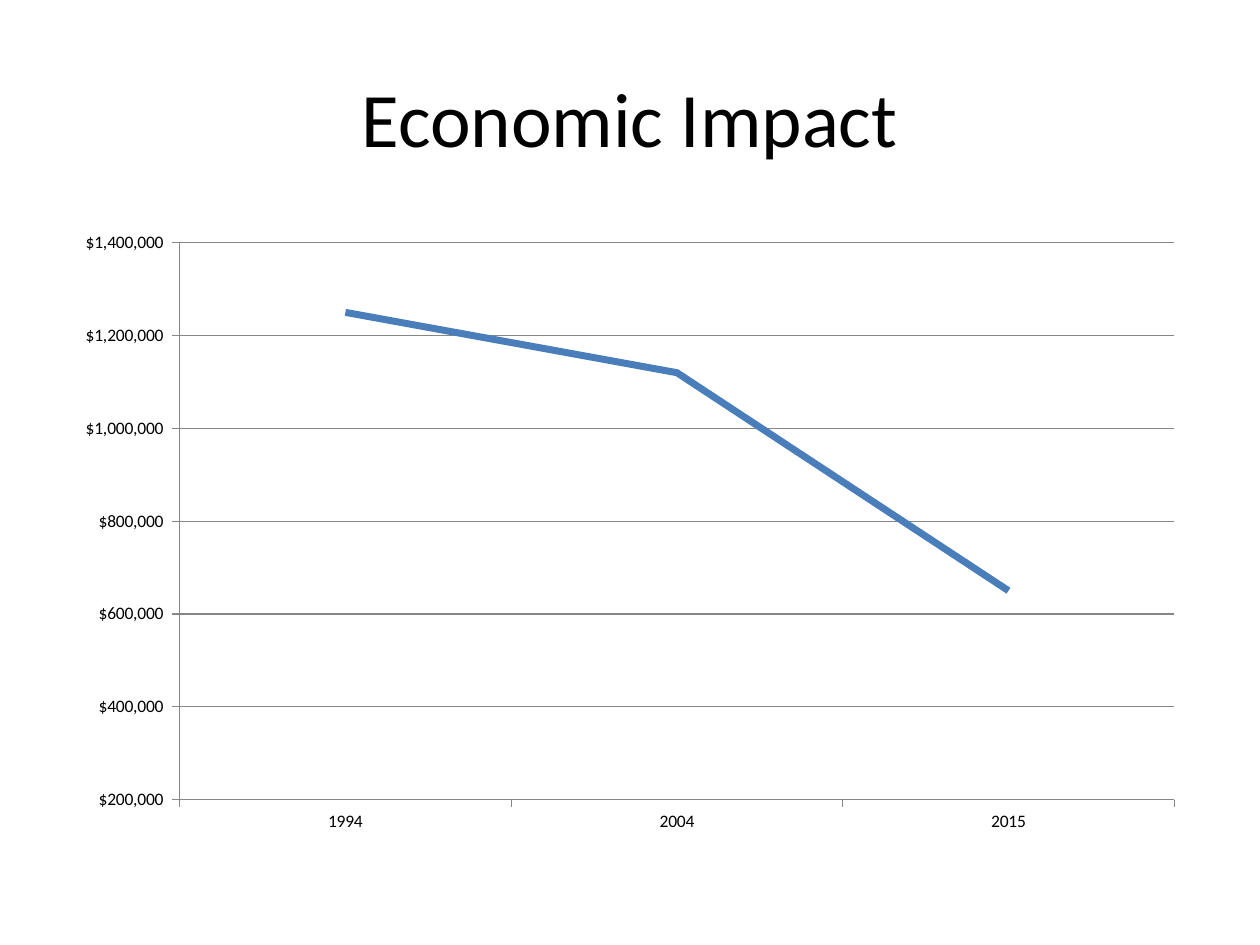
from pptx import Presentation
from pptx.chart.data import CategoryChartData
from pptx.dml.color import RGBColor
from pptx.enum.chart import XL_CHART_TYPE, XL_TICK_MARK
from pptx.enum.text import MSO_ANCHOR, PP_ALIGN
from pptx.util import Pt

COLORS = {"text": "000000", "line": "4A7EBB", "axis": "868686", "back": "FFFFFF"}
FONT = "Calibri"
SALES = {"1994": 1250000, "2004": 1120000, "2015": 650000}


def shade(name):
    """Return the named colour."""
    return RGBColor.from_string(COLORS[name])


def style(font, size, color="text"):
    """Set face, size and colour of a font."""
    font.name, font.size = FONT, Pt(size)
    font.color.rgb = shade(color)


def write(frame, text, size=18, color="text", align=PP_ALIGN.LEFT, anchor=MSO_ANCHOR.TOP):
    """Put formatted text in a frame."""
    frame.word_wrap = True
    frame.vertical_anchor = anchor
    para = frame.paragraphs[0]
    para.alignment = align
    run = para.add_run()
    run.text = text
    style(run.font, size, color)


def add_title(slide, box):
    """Place the title in its box."""
    title = slide.shapes.title
    title.left, title.top, title.width, title.height = map(Pt, box)
    write(title.text_frame, "Economic Impact", size=44,
          align=PP_ALIGN.CENTER, anchor=MSO_ANCHOR.MIDDLE)


def rule(line, color="axis", width=0.75):
    """Set colour and width of a line."""
    line.color.rgb = shade(color)
    line.width = Pt(width)


def add_trend(slide, box):
    """Place the line chart in its box."""
    data = CategoryChartData()
    data.categories = list(SALES)
    data.add_series("Series 1", list(SALES.values()))
    chart = slide.shapes.add_chart(XL_CHART_TYPE.LINE, *map(Pt, box), data).chart
    chart.has_title = chart.has_legend = False
    style(chart.font, 10)

    for axis in (chart.category_axis, chart.value_axis):
        axis.major_tick_mark = XL_TICK_MARK.OUTSIDE
        axis.minor_tick_mark = XL_TICK_MARK.NONE
        rule(axis.format.line)
    chart.category_axis.has_major_gridlines = False

    scale = chart.value_axis
    scale.minimum_scale, scale.maximum_scale = 200000, 1400000
    scale.major_unit = 200000
    scale.has_major_gridlines = True
    rule(scale.major_gridlines.format.line)
    scale.tick_labels.number_format = '"$"#,##0_)'
    scale.tick_labels.number_format_is_linked = False

    plot = chart.plots[0]
    plot.vary_by_categories = False
    trend = plot.series[0]
    trend.smooth = False
    rule(trend.format.line, "line", 4)


def main():
    """Build and save the slide."""
    deck = Presentation()
    deck.slide_width, deck.slide_height = Pt(720), Pt(540)
    slide = deck.slides.add_slide(deck.slide_layouts[5])
    fill = slide.background.fill
    fill.solid()
    fill.fore_color.rgb = shade("back")
    add_title(slide, (36, 21.6, 648, 90))
    add_trend(slide, (36, 126, 648, 356.4))
    deck.save("out.pptx")


if __name__ == "__main__":
    main()
